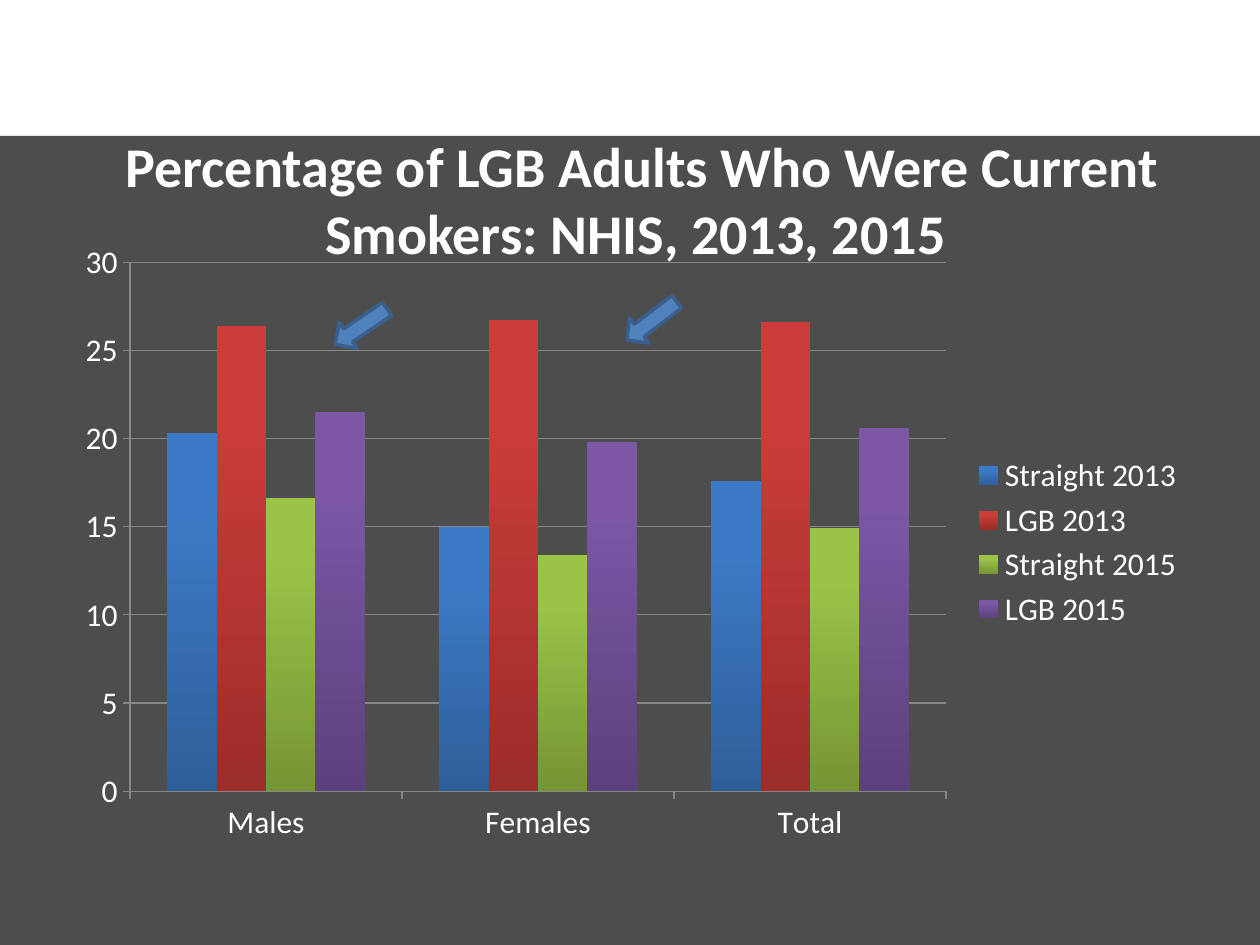
from pptx import Presentation
from pptx.chart.data import CategoryChartData
from pptx.dml.color import RGBColor
from pptx.enum.chart import XL_CHART_TYPE, XL_LEGEND_POSITION, XL_TICK_MARK
from pptx.enum.shapes import MSO_SHAPE
from pptx.enum.text import MSO_ANCHOR, PP_ALIGN
from pptx.util import Cm, Pt

COLORS = {
    "panel": "4D4D4D",
    "text": "FFFFFF",
    "grid": "878787",
    "arrow": "4F81BD",
    "arrow_line": "3A5F8C",
}
CATEGORIES = ["Males", "Females", "Total"]
SERIES = {
    "Straight 2013": ([20.3, 15, 17.6], "2E5F99", "3C7AC7"),
    "LGB 2013": ([26.4, 26.7, 26.6], "9B2D2A", "CB3D3A"),
    "Straight 2015": ([16.6, 13.4, 14.9], "769535", "9BC348"),
    "LGB 2015": ([21.5, 19.8, 20.6], "5D417E", "7B57A5"),
}
ARROWS = [
    (MSO_SHAPE.DOWN_ARROW, 5.69, 1.3, 0.64, 1.27, 55.8),
    (MSO_SHAPE.RIGHT_ARROW, 11.23, 1.5, 1.27, 0.64, 142.6),
]


def rgb(name):
    return RGBColor.from_string(COLORS[name])


def set_format(target, values):
    for name, value in values.items():
        setattr(target, name, value)


def format_font(font, size, bold=False):
    set_format(font, {"name": "Calibri", "size": Pt(size), "bold": bold})
    font.color.rgb = rgb("text")


def add_filled_shape(slide, kind, box, color):
    shape = slide.shapes.add_shape(kind, *map(Cm, box))
    shape.shadow.inherit = False
    shape.fill.solid()
    shape.fill.fore_color.rgb = rgb(color)
    shape.line.fill.background()
    return shape


def add_title(slide, box):
    title = slide.shapes.add_textbox(*map(Cm, box))
    frame = title.text_frame
    set_format(frame, {"word_wrap": True, "vertical_anchor": MSO_ANCHOR.MIDDLE})
    paragraph = frame.paragraphs[0]
    paragraph.alignment = PP_ALIGN.CENTER
    run = paragraph.add_run()
    run.text = "Percentage of LGB Adults Who Were Current Smokers: NHIS, 2013, 2015 "
    format_font(run.font, 32, True)


def format_axis(axis):
    set_format(axis, {
        "major_tick_mark": XL_TICK_MARK.OUTSIDE,
        "minor_tick_mark": XL_TICK_MARK.NONE,
    })
    format_font(axis.tick_labels.font, 18)
    axis.format.line.color.rgb = rgb("grid")


def add_smoking_chart(slide, box):
    data = CategoryChartData()
    data.categories = CATEGORIES
    for name, (values, _, _) in SERIES.items():
        data.add_series(name, values)
    chart = slide.shapes.add_chart(
        XL_CHART_TYPE.COLUMN_CLUSTERED, *map(Cm, box), data
    ).chart
    set_format(chart, {"has_title": False, "has_legend": True})
    format_font(chart.font, 18)
    set_format(chart.legend, {
        "position": XL_LEGEND_POSITION.RIGHT,
        "include_in_layout": False,
    })
    format_font(chart.legend.font, 18)

    for axis in (chart.category_axis, chart.value_axis):
        format_axis(axis)
    set_format(chart.value_axis, {
        "minimum_scale": 0,
        "maximum_scale": 30,
        "major_unit": 5,
        "has_major_gridlines": True,
    })
    chart.value_axis.major_gridlines.format.line.color.rgb = rgb("grid")

    plot = chart.plots[0]
    set_format(plot, {"gap_width": 150, "overlap": 0, "vary_by_categories": False})
    for series in plot.series:
        _, dark, light = SERIES[series.name]
        fill = series.format.fill
        fill.gradient()
        fill.gradient_angle = 90
        for stop, position, color in zip(fill.gradient_stops, (0, 0.8), (dark, light)):
            stop.position = position
            stop.color.rgb = RGBColor.from_string(color)


def add_arrows(slide, box):
    left, top = box[:2]
    for kind, x, y, width, height, rotation in ARROWS:
        arrow = add_filled_shape(
            slide, kind, (left + x, top + y, width, height), "arrow"
        )
        arrow.rotation = rotation
        arrow.line.color.rgb = rgb("arrow_line")
        arrow.line.width = Pt(2)


def main():
    presentation = Presentation()
    set_format(presentation, {"slide_width": Cm(25.4), "slide_height": Cm(19.05)})
    slide = presentation.slides.add_slide(presentation.slide_layouts[6])
    chart_box = (1.27, 4.65, 22.86, 12.57)
    add_filled_shape(slide, MSO_SHAPE.RECTANGLE, (0, 2.74, 25.4, 16.31), "panel")
    add_title(slide, (1.3, 2.74, 23.29, 2.54))
    add_smoking_chart(slide, chart_box)
    add_arrows(slide, chart_box)
    presentation.save("out.pptx")


if __name__ == "__main__":
    main()
